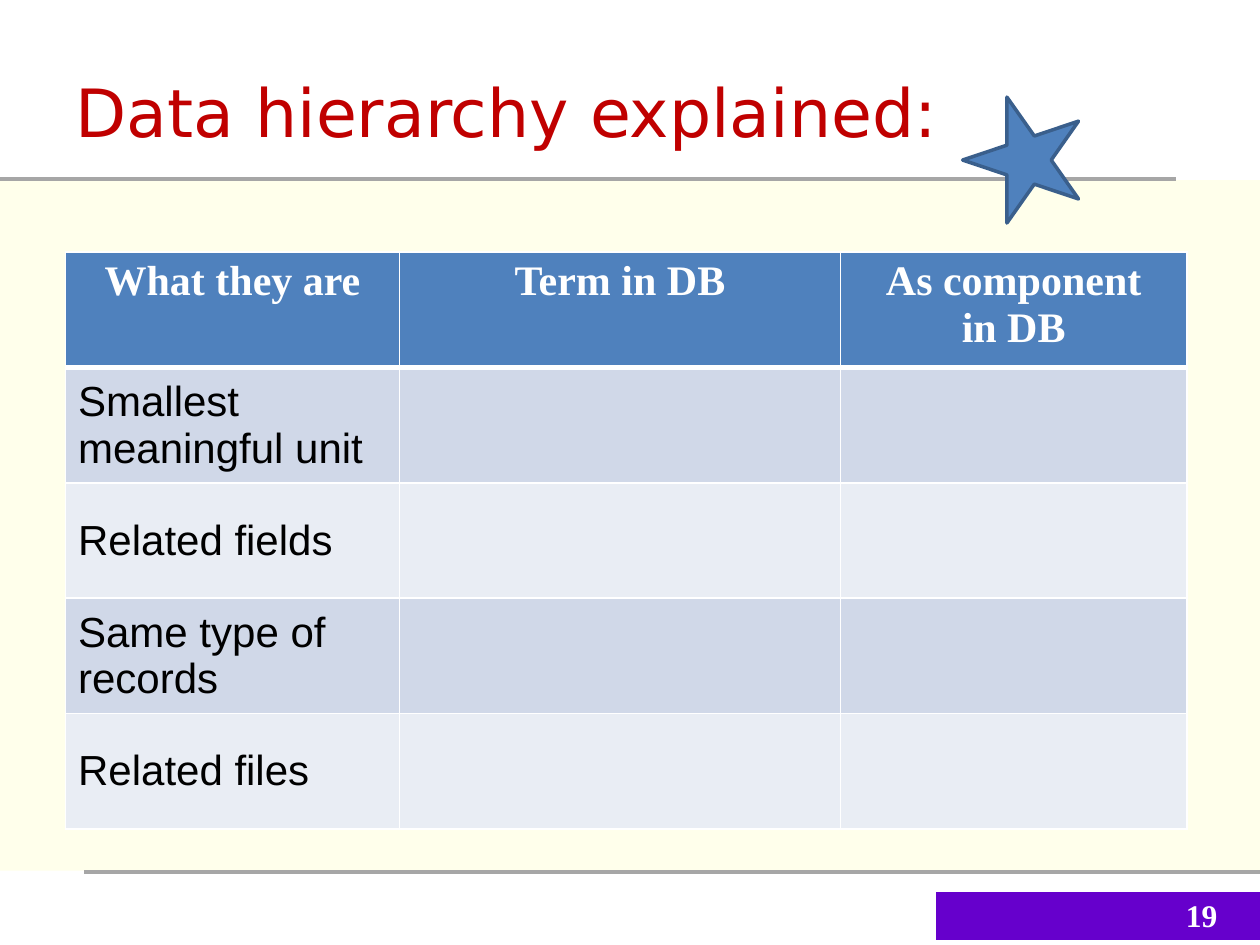
from lxml.etree import SubElement
from pptx import Presentation
from pptx.dml.color import RGBColor
from pptx.enum.shapes import MSO_CONNECTOR, MSO_SHAPE
from pptx.enum.text import MSO_ANCHOR, PP_ALIGN
from pptx.oxml.ns import qn
from pptx.util import Inches, Pt

WHITE = RGBColor(0xFF, 0xFF, 0xFF)
BLACK = RGBColor(0, 0, 0)
CREAM = RGBColor(0xFF, 0xFF, 0xCC)
GRAY = RGBColor(0xA6, 0xA6, 0xA6)
PURPLE = RGBColor(0x66, 0x00, 0xCC)
RED = RGBColor(0xC0, 0x00, 0x00)
BLUE = RGBColor(0x4F, 0x81, 0xBD)
NAVY = RGBColor(0x3A, 0x5F, 0x8C)
BANDS = [RGBColor(0xD0, 0xD8, 0xE8), RGBColor(0xE9, 0xED, 0xF4)]

HEADS = ["What they are", "Term in DB", "As component\nin DB"]
TERMS = ["Smallest meaningful unit", "Related fields",
         "Same type of records", "Related files"]
COLS = [2.65, 3.5, 2.75]


def style(frame, name, size, color, bold=False, align=PP_ALIGN.LEFT):
    for para in frame.paragraphs:
        para.alignment = align
        for run in para.runs:
            font = run.font
            font.name, font.size, font.bold = name, Pt(size), bold
            font.color.rgb = color


def add_shape(slide, kind, box, fill):
    shape = slide.shapes.add_shape(kind, *map(Inches, box))
    shape.shadow.inherit = False
    shape.fill.solid()
    shape.fill.fore_color.rgb = fill
    shape.line.fill.background()
    return shape


def add_rule(slide, left, right, top):
    rule = slide.shapes.add_connector(
        MSO_CONNECTOR.STRAIGHT, *map(Inches, (left, top, right, top)))
    rule.line.color.rgb = GRAY
    rule.line.width = Pt(2)
    SubElement(rule.element.spPr, qn("a:effectLst"))


def add_frame(slide):
    # Pale body panel
    panel = add_shape(slide, MSO_SHAPE.RECTANGLE, (0, 1.43, 10, 5.48), CREAM)
    tint = panel.element.spPr.find(qn("a:solidFill"))[0]
    SubElement(tint, qn("a:alpha"), val="39000")
    # Rules above and below the body
    add_rule(slide, 0.67, 10, 6.92)
    add_rule(slide, 0, 9.33, 1.42)


def add_title(slide, box):
    title = slide.shapes.title
    title.left, title.top, title.width, title.height = map(Inches, box)
    frame = title.text_frame
    frame.text = "Data hierarchy explained:"
    frame.word_wrap = True
    frame.vertical_anchor = MSO_ANCHOR.BOTTOM
    para = frame.paragraphs[0]
    para.space_before = para.space_after = Pt(6)
    style(frame, "DejaVu Sans", 38, RED)


def add_number(slide, box):
    left, top, width, height = box
    add_shape(slide, MSO_SHAPE.RECTANGLE, box, PURPLE)
    label = slide.shapes.add_textbox(
        *map(Inches, (left, top - 0.02, width - 0.25, height + 0.02)))
    frame = label.text_frame
    frame.word_wrap = True
    frame.text = "19"
    frame.vertical_anchor = MSO_ANCHOR.MIDDLE
    style(frame, "Times New Roman", 18, WHITE, True, PP_ALIGN.RIGHT)


def add_border(cell, side, width):
    line = SubElement(cell._tc.get_or_add_tcPr(), qn(f"a:ln{side}"),
                      w=str(Pt(width)))
    fill = SubElement(line, qn("a:solidFill"))
    SubElement(fill, qn("a:srgbClr"), val=str(WHITE))


def add_grid(slide, box):
    count = len(TERMS) + 1
    table = slide.shapes.add_table(
        count, len(COLS), *map(Inches, box)).table
    for col, width in zip(table.columns, COLS):
        col.width = Inches(width)
    for row in table.rows:
        row.height = Inches(box[3] / count)

    rows = [HEADS] + [[term, "", ""] for term in TERMS]
    for i, texts in enumerate(rows):
        # The line under the header is thicker than the rest
        sides = {"L": 1, "R": 1, "T": 3 if i == 1 else 1,
                 "B": 3 if i == 0 else 1}
        for j, text in enumerate(texts):
            cell = table.cell(i, j)
            for side, width in sides.items():
                add_border(cell, side, width)
            cell.fill.solid()
            cell.fill.fore_color.rgb = BANDS[(i - 1) % 2] if i else BLUE
            cell.text_frame.text = text
            if i == 0:
                style(cell.text_frame, "Times New Roman", 24, WHITE, True,
                      PP_ALIGN.CENTER)
            else:
                cell.vertical_anchor = MSO_ANCHOR.MIDDLE
                style(cell.text_frame, "Arial", 24, BLACK)


def add_star(slide, box):
    star = add_shape(slide, MSO_SHAPE.STAR_5_POINT, box, BLUE)
    star.rotation = 270
    star.line.color.rgb = NAVY
    star.line.width = Pt(2)


def main():
    deck = Presentation()
    deck.slide_width, deck.slide_height = Inches(10), Inches(7.5)
    slide = deck.slides.add_slide(deck.slide_layouts[5])
    add_frame(slide)
    add_title(slide, (0.5, 0.08, 8.92, 1.17))
    add_number(slide, (7.43, 7.08, 2.58, 0.38))
    add_grid(slide, (0.52, 2, 8.9, 4.58))
    add_star(slide, (7.6, 0.81, 1, 0.92))
    deck.save("out.pptx")


if __name__ == "__main__":
    main()
